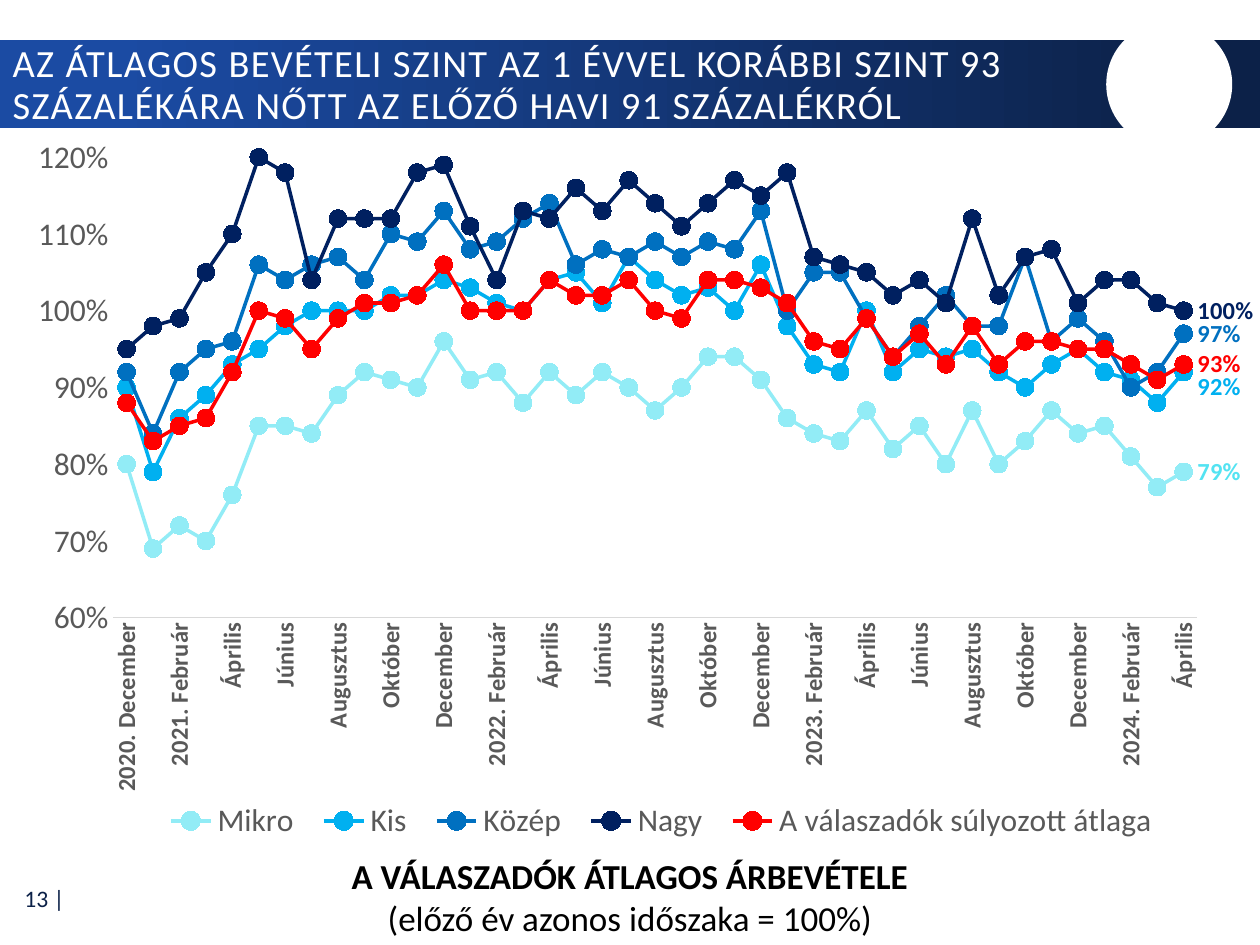
from dataclasses import dataclass

from lxml.etree import SubElement
from pptx import Presentation
from pptx.chart.data import CategoryChartData
from pptx.dml.color import RGBColor
from pptx.enum.chart import (XL_CHART_TYPE, XL_LABEL_POSITION, XL_LEGEND_POSITION,
                             XL_MARKER_STYLE, XL_TICK_MARK)
from pptx.enum.shapes import MSO_SHAPE
from pptx.enum.text import MSO_ANCHOR, MSO_AUTO_SIZE, PP_ALIGN
from pptx.oxml import parse_xml
from pptx.oxml.ns import nsdecls, qn
from pptx.util import Inches, Pt


@dataclass(frozen=True)
class Theme:
    font: str = "Calibri"
    white: str = "FFFFFF"
    black: str = "000000"
    navy: str = "0C2148"
    blue: str = "1B4BA3"
    gray: str = "595959"
    axis_line: str = "D9D9D9"
    title_size: float = 22
    caption_size: float = 20
    chart_size: float = 18
    label_size: float = 14
    page_size: float = 13.5


THEME = Theme()

TITLE = ("AZ ÁTLAGOS BEVÉTELI SZINT AZ 1 ÉVVEL KORÁBBI SZINT 93 "
         "SZÁZALÉKÁRA NŐTT AZ ELŐZŐ HAVI 91 SZÁZALÉKRÓL")

# Every second month is labelled
MONTHS = ["2020. December", "2021. Február", "Április", "Június", "Augusztus", "Október",
          "December", "2022. Február", "Április", "Június", "Augusztus", "Október",
          "December", "2023. Február", "Április", "Június", "Augusztus", "Október",
          "December", "2024. Február", "Április"]

# Name, line colour, label colour, downward label shift, values in percent
SERIES = [
    ("Mikro", "92ECF6", "53E3F2", 0,
     [80, 69, 72, 70, 76, 85, 85, 84, 89, 92, 91, 90, 96, 91, 92, 88, 92, 89, 92, 90, 87,
      90, 94, 94, 91, 86, 84, 83, 87, 82, 85, 80, 87, 80, 83, 87, 84, 85, 81, 77, 79]),
    ("Kis", "00B0F0", "00B0F0", 0.02,
     [90, 79, 86, 89, 93, 95, 98, 100, 100, 100, 102, 102, 104, 103, 101, 100, 104, 105,
      101, 107, 104, 102, 103, 100, 106, 98, 93, 92, 100, 92, 95, 94, 95, 92, 90, 93, 95,
      92, 91, 88, 92]),
    ("Közép", "0070C0", "0070C0", 0,
     [92, 84, 92, 95, 96, 106, 104, 106, 107, 104, 110, 109, 113, 108, 109, 112, 114, 106,
      108, 107, 109, 107, 109, 108, 113, 100, 105, 105, 99, 94, 98, 102, 98, 98, 107, 96,
      99, 96, 90, 92, 97]),
    ("Nagy", "002060", "002060", 0,
     [95, 98, 99, 105, 110, 120, 118, 104, 112, 112, 112, 118, 119, 111, 104, 113, 112,
      116, 113, 117, 114, 111, 114, 117, 115, 118, 107, 106, 105, 102, 104, 101, 112, 102,
      107, 108, 101, 104, 104, 101, 100]),
    ("A válaszadók súlyozott átlaga", "FF0000", "FF0000", 0,
     [88, 83, 85, 86, 92, 100, 99, 95, 99, 101, 101, 102, 106, 100, 100, 100, 104, 102,
      102, 104, 100, 99, 104, 104, 103, 101, 96, 95, 99, 94, 97, 93, 98, 93, 96, 96, 95,
      95, 93, 91, 93]),
]


def format_font(font, size, color, bold=False):
    formats = {"name": THEME.font, "size": Pt(size), "bold": bold}
    for attribute, value in formats.items():
        setattr(font, attribute, value)
    font.color.rgb = RGBColor.from_string(color)


def manual_layout(**values):
    """Return a c:layout element with the values in the order given."""
    layout = parse_xml(f"<c:layout {nsdecls('c')}><c:manualLayout/></c:layout>")
    for name, value in values.items():
        SubElement(layout[0], qn(f"c:{name}")).set("val", str(value))
    return layout


def remove_layouts(element):
    for layout in element.findall(qn("c:layout")):
        element.remove(layout)


def add_plain_shape(slide, kind, left, top, width, height):
    shape = slide.shapes.add_shape(kind, Inches(left), Inches(top), Inches(width), Inches(height))
    shape.shadow.inherit = False
    shape.line.fill.background()
    return shape


def add_header(slide):
    # Gradient band
    band = add_plain_shape(slide, MSO_SHAPE.RECTANGLE, 0, 0.32, 10, 0.7)
    band.fill.gradient()
    band.fill.gradient_angle = 0
    stops = ((0.09, THEME.blue), (0.95, THEME.navy))
    for stop, (position, color) in zip(band.fill.gradient_stops, stops):
        stop.position = position
        stop.color.rgb = RGBColor.from_string(color)

    # White disc
    disc = add_plain_shape(slide, MSO_SHAPE.OVAL, 8.78, 0.17, 1, 1)
    disc.fill.solid()
    disc.fill.fore_color.rgb = RGBColor.from_string(THEME.white)

    # Title, brought in front of the band
    title = slide.shapes.title
    slide.shapes._spTree.append(title._element)
    places = {"left": 0, "top": 0.35, "width": 8.83, "height": 0.67}
    for attribute, value in places.items():
        setattr(title, attribute, Inches(value))
    frame = title.text_frame
    frame.text = TITLE
    frame.auto_size = MSO_AUTO_SIZE.NONE
    frame.vertical_anchor = MSO_ANCHOR.MIDDLE
    paragraph = frame.paragraphs[0]
    paragraph.alignment = PP_ALIGN.LEFT
    paragraph.line_spacing = 0.9
    run = paragraph.runs[0]
    format_font(run.font, THEME.title_size, THEME.white)
    run.font._element.set("spc", "80")


def add_text(slide, left, top, width, height, lines, size, color, alignment, anchor):
    box = slide.shapes.add_textbox(Inches(left), Inches(top), Inches(width), Inches(height))
    frame = box.text_frame
    frame.word_wrap = True
    frame.vertical_anchor = anchor
    for index, (text, bold) in enumerate(lines):
        paragraph = frame.add_paragraph() if index else frame.paragraphs[0]
        paragraph.alignment = alignment
        run = paragraph.add_run()
        run.text = text
        format_font(run.font, size, color, bold)


def format_axes(chart):
    category_axis, value_axis = chart.category_axis, chart.value_axis
    for axis in (category_axis, value_axis):
        axis.has_major_gridlines = False
        axis.major_tick_mark = axis.minor_tick_mark = XL_TICK_MARK.NONE
    format_font(category_axis.tick_labels.font, THEME.label_size, THEME.gray, bold=True)
    category_axis.format.line.color.rgb = RGBColor.from_string(THEME.axis_line)
    category_axis.format.line.width = Pt(0.75)
    category_axis._element.find(qn("c:txPr")).find(qn("a:bodyPr")).set("rot", "-5400000")
    skip = parse_xml(f'<c:tickLblSkip {nsdecls("c")} val="1"/>')
    category_axis._element.find(qn("c:noMultiLvlLbl")).addprevious(skip)

    scale = {"minimum_scale": 0.6, "maximum_scale": 1.2, "major_unit": 0.1}
    for attribute, value in scale.items():
        setattr(value_axis, attribute, value)
    value_axis.format.line.fill.background()
    value_axis.tick_labels.number_format = "0%"
    value_axis.tick_labels.number_format_is_linked = False
    format_font(value_axis.tick_labels.font, THEME.chart_size, THEME.gray)


def format_legend(chart):
    chart.has_legend = True
    legend = chart.legend
    legend.position = XL_LEGEND_POSITION.BOTTOM
    legend.include_in_layout = False
    format_font(legend.font, THEME.chart_size, THEME.gray)
    # One row below the month labels
    remove_layouts(legend._element)
    legend._element.find(qn("c:legendPos")).addnext(
        manual_layout(xMode="edge", yMode="edge", x=0.12, y=0.93, w=0.81, h=0.07))


def format_series(series, color, label_color, label_shift, last):
    rgb = RGBColor.from_string(color)
    series.smooth = False
    series.format.line.color.rgb = rgb
    series.format.line.width = Pt(2)
    marker = series.marker
    marker.style = XL_MARKER_STYLE.CIRCLE
    marker.size = 10
    marker.format.fill.solid()
    marker.format.fill.fore_color.rgb = rgb
    marker.format.line.color.rgb = rgb

    # Only the latest month carries a value
    label = series.points[last].data_label
    format_font(label.font, THEME.label_size, label_color, bold=True)
    label.position = XL_LABEL_POSITION.RIGHT
    if label_shift:
        index = series._element.find(f"{qn('c:dLbls')}/{qn('c:dLbl')}/{qn('c:idx')}")
        index.addnext(manual_layout(x=0, y=label_shift))


def add_revenue_chart(slide):
    data = CategoryChartData(number_format="0%")
    data.categories = [label for month in MONTHS for label in (month, "")][:-1]
    for name, _, _, _, percents in SERIES:
        data.add_series(name, [percent / 100 for percent in percents])
    chart = slide.shapes.add_chart(XL_CHART_TYPE.LINE_MARKERS, Inches(0), Inches(1.02),
                                   Inches(10), Inches(5.71), data).chart
    format_font(chart.font, THEME.chart_size, THEME.black)
    chart.has_title = False
    format_legend(chart)
    format_axes(chart)

    plot = chart.plots[0]
    plot.vary_by_categories = False
    for series, (_, color, label_color, shift, percents) in zip(plot.series, SERIES):
        format_series(series, color, label_color, shift, len(percents) - 1)

    # Fixed plot area
    plot_area = chart._chartSpace.chart.plotArea
    remove_layouts(plot_area)
    plot_area.insert(0, manual_layout(layoutTarget="inner", xMode="edge", yMode="edge",
                                      x=0.09, y=0.04, w=0.86, h=0.64))


def main():
    presentation = Presentation()
    presentation.slide_width, presentation.slide_height = Inches(10), Inches(7.5)
    slide = presentation.slides.add_slide(presentation.slide_layouts[5])
    add_text(slide, 0.01, 6.94, 0.6, 0.37, [("13 |", False)], THEME.page_size, THEME.navy,
             PP_ALIGN.RIGHT, MSO_ANCHOR.MIDDLE)
    add_header(slide)
    caption = [("A VÁLASZADÓK ÁTLAGOS ÁRBEVÉTELE", True),
               ("(előző év azonos időszaka = 100%)", False)]
    add_text(slide, 0.97, 6.73, 8.06, 0.77, caption, THEME.caption_size, THEME.black,
             PP_ALIGN.CENTER, MSO_ANCHOR.TOP)
    add_revenue_chart(slide)
    presentation.save("out.pptx")


if __name__ == "__main__":
    main()
